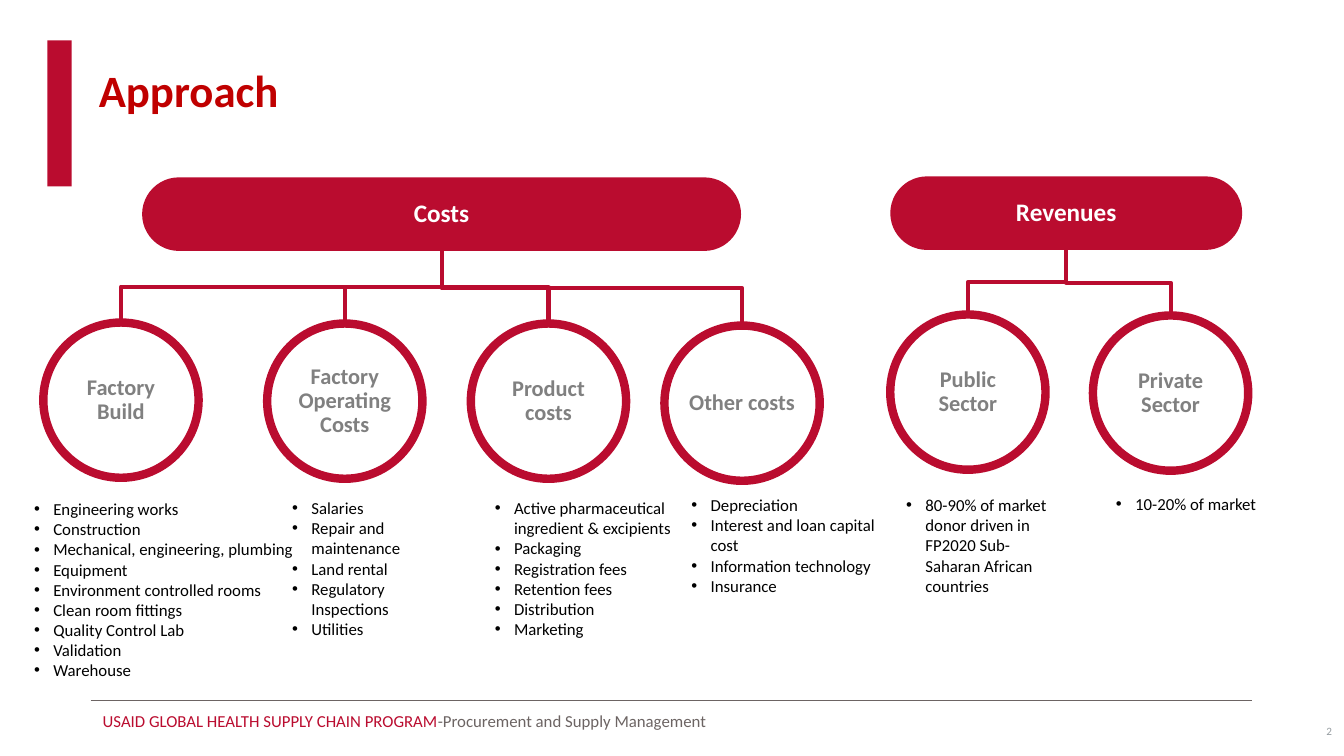
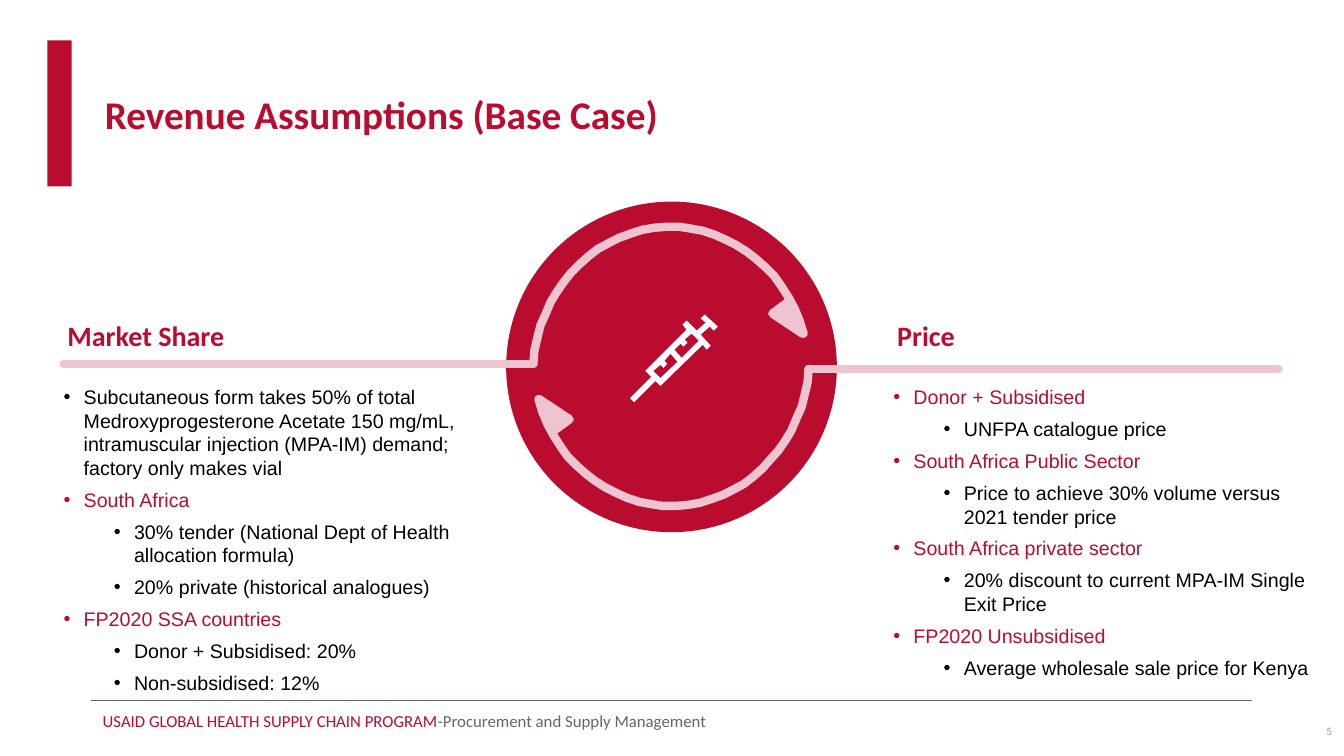
"""Build the approach and revenue assumption slides of a supply chain deck."""
from lxml.etree import SubElement
from pptx import Presentation
from pptx.dml.color import RGBColor
from pptx.enum.shapes import MSO_CONNECTOR, MSO_SHAPE
from pptx.enum.text import MSO_ANCHOR, MSO_AUTO_SIZE, PP_ALIGN
from pptx.oxml.ns import qn
from pptx.util import Emu, Pt

CRIMSON = RGBColor(0xBA, 0x0C, 0x2F)
RED = RGBColor(0xC0, 0x00, 0x00)
PINK = RGBColor(0xEE, 0xC4, 0xD0)
WHITE = RGBColor(0xFF, 0xFF, 0xFF)
BLACK = RGBColor(0x00, 0x00, 0x00)
GRAY = RGBColor(0x80, 0x80, 0x80)
FOOTER_GRAY = RGBColor(0x6C, 0x64, 0x63)
NUMBER_GRAY = RGBColor(0x95, 0x9C, 0xA0)
PX = 9144
CIRCLE = 154


def px(length):
    return Emu(round(length * PX))


def bezier(start, first, second, end, steps=16):
    return [
        tuple((1 - t) ** 3 * a + 3 * t * (1 - t) ** 2 * b + 3 * t * t * (1 - t) * c + t ** 3 * d
              for a, b, c, d in zip(start, first, second, end))
        for t in (step / steps for step in range(1, steps + 1))
    ]


class Deck:
    """House style and the slide being drawn."""

    def __init__(self):
        self.presentation = Presentation()
        self.presentation.slide_width = px(1333)
        self.presentation.slide_height = px(750)
        self.slide = None

    def start(self, title, left, top, size, color, number):
        self.slide = self.presentation.slides.add_slide(self.presentation.slide_layouts[5])
        heading = self.slide.shapes.title
        heading.left, heading.top, heading.width, heading.height = map(px, (left, top, 1240, 84))
        frame = heading.text_frame
        frame.text = title
        frame.auto_size = MSO_AUTO_SIZE.NONE
        frame.vertical_anchor = MSO_ANCHOR.BOTTOM
        frame.paragraphs[0].line_spacing = 0.9
        self.format(frame.paragraphs[0], size, color, True, PP_ALIGN.LEFT)

        self.shape(MSO_SHAPE.RECTANGLE, 47, 40, 24, 145)
        self.line(90, 695, 1242, 695, FOOTER_GRAY, 0.5)
        footer = self.text("USAID GLOBAL HEALTH SUPPLY CHAIN PROGRAM", 92, 700, 992, 30, 12, CRIMSON)
        division = footer.paragraphs[0].add_run()
        division.text = "-Procurement and Supply Management"
        self.style(division, 12, FOOTER_GRAY)
        self.text(number, 1282, 716, 39, 19, 8, NUMBER_GRAY, anchor=MSO_ANCHOR.MIDDLE,
                  align=PP_ALIGN.RIGHT, inset=False)

    def style(self, run, size, color, bold=False, font="Calibri"):
        run.font.name, run.font.size, run.font.bold = font, Pt(size), bold
        run.font.color.rgb = color

    def format(self, paragraph, size, color, bold=False, align=PP_ALIGN.LEFT, font="Calibri"):
        paragraph.alignment = align
        for run in paragraph.runs:
            self.style(run, size, color, bold, font)

    def clear_insets(self, frame):
        frame.margin_left = frame.margin_right = frame.margin_top = frame.margin_bottom = 0

    def frame(self, left, top, width, height, anchor=MSO_ANCHOR.TOP, inset=True):
        frame = self.slide.shapes.add_textbox(*map(px, (left, top, width, height))).text_frame
        frame.word_wrap = True
        frame.vertical_anchor = anchor
        if not inset:
            self.clear_insets(frame)
        return frame

    def text(self, words, left, top, width, height, size, color, bold=False,
             anchor=MSO_ANCHOR.TOP, align=PP_ALIGN.LEFT, inset=True):
        frame = self.frame(left, top, width, height, anchor, inset)
        frame.text = words
        self.format(frame.paragraphs[0], size, color, bold, align)
        return frame

    def bullet(self, paragraph, margin, hang):
        properties = paragraph._p.get_or_add_pPr()
        properties.set("marL", str(px(margin)))
        properties.set("indent", str(-px(hang)))
        SubElement(properties, qn("a:buFont")).set("typeface", "Arial")
        SubElement(properties, qn("a:buChar")).set("char", "•")

    def items(self, entries, left, top, width, height):
        frame = self.frame(left, top, width, height)
        frame.text = "\n".join(entries)
        for paragraph in frame.paragraphs:
            self.bullet(paragraph, 19, 19)
            self.format(paragraph, 12, BLACK)

    def outline(self, entries, left, top, width, height):
        frame = self.frame(left, top, width, height, inset=False)
        frame.text = "\n".join(words for words, _, _ in entries)
        for paragraph, (_, level, color) in zip(frame.paragraphs, entries):
            paragraph.level = level
            self.bullet(paragraph, 20 + 50 * level, 20)
            paragraph.space_after = Pt(6)
            self.format(paragraph, 14, color, font="Arial")

    def paint(self, shape, fill, line=None, weight=6):
        shape.shadow.inherit = False
        if fill is None:
            shape.fill.background()
        else:
            shape.fill.solid()
            shape.fill.fore_color.rgb = fill
        if line is None:
            shape.line.fill.background()
        else:
            self.stroke(shape, line, weight)

    def stroke(self, shape, color, weight, rounded=False):
        shape.line.color.rgb = color
        shape.line.width = Pt(weight)
        if rounded:
            outline = shape.line._get_or_add_ln()
            outline.set("cap", "rnd")
            SubElement(outline, qn("a:round"))

    def shape(self, kind, left, top, width, height, fill=CRIMSON, line=None):
        shape = self.slide.shapes.add_shape(kind, *map(px, (left, top, width, height)))
        self.paint(shape, fill, line)
        return shape

    def label(self, shape, words, size, color):
        frame = shape.text_frame
        frame.text = words
        frame.word_wrap = True
        frame.vertical_anchor = MSO_ANCHOR.MIDDLE
        self.clear_insets(frame)
        frame.paragraphs[0].line_spacing = 0.9
        self.format(frame.paragraphs[0], size, color, True, PP_ALIGN.CENTER)

    def pill(self, words, left, top, width, height):
        pill = self.shape(MSO_SHAPE.ROUNDED_RECTANGLE, left, top, width, height)
        pill.adjustments[0] = 0.5
        self.label(pill, words, 18, WHITE)

    def circle(self, words, left, top):
        circle = self.shape(MSO_SHAPE.FLOWCHART_CONNECTOR, left, top, CIRCLE, CIRCLE, WHITE, CRIMSON)
        self.label(circle, words, 16, GRAY)

    def connector(self, kind, points, color, weight, rounded=False):
        connector = self.slide.shapes.add_connector(kind, *map(px, points))
        self.stroke(connector, color, weight, rounded)
        SubElement(connector._element.spPr, qn("a:effectLst"))
        return connector

    def line(self, x1, y1, x2, y2, color, weight, rounded=False):
        self.connector(MSO_CONNECTOR.STRAIGHT, (x1, y1, x2, y2), color, weight, rounded)

    def branch(self, parent_x, parent_y, child_x, child_y):
        middle_x, middle_y = (parent_x + child_x) / 2, (parent_y + child_y) / 2
        half_drop, half_span = (child_y - parent_y) / 2, abs(child_x - parent_x) / 2
        side = 1 if child_x < parent_x else -1
        points = (middle_x - side * half_drop, middle_y - half_span,
                  middle_x + side * half_drop, middle_y + half_span)
        elbow = self.connector(MSO_CONNECTOR.ELBOW, points, CRIMSON, 3)
        turn = 90 if side == 1 else 270
        elbow._element.spPr.find(qn("a:xfrm")).set("rot", str(turn * 60000))

    def outlined(self, contours, fill=None, line=None, closed=True):
        builder = self.slide.shapes.build_freeform(*contours[0][0], scale=PX)
        for index, contour in enumerate(contours):
            if index:
                builder.move_to(*contour[0])
            builder.add_line_segments(contour[1:], close=closed)
        freeform = builder.convert_to_shape()
        self.paint(freeform, fill)
        if line is not None:
            self.stroke(freeform, line, 6, rounded=True)


BRANCHES = [
    ("Costs", (141, 176, 594, 73), [
        ("Factory Build", (43, 320), (24, 490, 341, 194),
         ["Engineering works", "Construction", "Mechanical, engineering, plumbing", "Equipment",
          "Environment controlled rooms", "Clean room fittings", "Quality Control Lab",
          "Validation", "Warehouse"]),
        ("Factory Operating Costs", (265, 321), (280, 489, 170, 182),
         ["Salaries", "Repair and maintenance", "Land rental", "Regulatory Inspections", "Utilities"]),
        ("Product costs", (467, 321), (481, 489, 267, 182),
         ["Active pharmaceutical\vingredient & excipients", "Packaging", "Registration fees",
          "Retention fees", "Distribution", "Marketing"]),
        ("Other costs", (659, 323), (676, 486, 207, 141),
         ["Depreciation", "Interest and loan capital cost", "Information technology", "Insurance"]),
    ]),
    ("Revenues", (883, 175, 349, 73), [
        ("Public Sector", (883, 312), (889, 486, 170, 141),
         ["80-90% of market donor driven in FP2020 Sub-Saharan African countries"]),
        ("Private Sector", (1084, 313), (1097, 485, 170, 61), ["10-20% of market"]),
    ]),
]

MARKET_SHARE = [
    ("Subcutaneous form takes 50% of total Medroxyprogesterone Acetate 150 mg/mL, "
     "intramuscular injection (MPA-IM) demand; factory only makes vial", 0, BLACK),
    ("South Africa", 0, CRIMSON),
    ("30% tender (National Dept of Health allocation formula)", 1, BLACK),
    ("20% private (historical analogues)", 1, BLACK),
    ("FP2020 SSA countries", 0, CRIMSON),
    ("Donor + Subsidised: 20%", 1, BLACK),
    ("Non-subsidised: 12%", 1, BLACK),
]

PRICE = [
    ("Donor + Subsidised", 0, CRIMSON),
    ("UNFPA catalogue price", 1, BLACK),
    ("South Africa Public Sector", 0, CRIMSON),
    ("Price to achieve 30% volume versus 2021 tender price", 1, BLACK),
    ("South Africa private sector", 0, CRIMSON),
    ("20% discount to current MPA-IM Single Exit Price", 1, BLACK),
    ("FP2020 Unsubsidised", 0, CRIMSON),
    ("Average wholesale sale price for Kenya", 1, BLACK),
]

SYRINGE = [
    [(699, 312), (695, 316), (700, 320), (691, 328), (681, 318), (677, 322), (681, 327),
     (640, 368), (646, 374), (625, 395), (629, 399), (650, 378), (655, 383), (697, 342),
     (701, 347), (705, 343), (695, 332), (704, 324), (708, 328), (712, 324)],
    [(648, 368), (655, 362), (658, 365), (662, 361), (659, 358), (665, 351), (672, 359), (655, 375)],
    [(676, 355), (669, 347), (675, 341), (678, 344), (682, 340), (679, 337), (686, 331), (693, 338)],
]

ARC = ([(802, 366)]
       + bezier((802, 366), (797, 436), (747, 492), (682, 501))
       + bezier((682, 501), (616, 509), (553, 465), (534, 396)))
ARROWHEAD = [(535, 396), (565, 416), (550, 427)]
UNDERLINE = [(1268, 366), (802, 366)]


def half_turn(points):
    return [(1331 - x, 727 - y) for x, y in points]


def draw_approach(deck):
    deck.start("Approach", 88, 37, 32, RED, "2")
    for heading, (left, top, width, height), parts in BRANCHES:
        for _, (part_left, part_top), _, _ in parts:
            deck.branch(left + width / 2, top + height, part_left + CIRCLE / 2, part_top)
        deck.pill(heading, left, top, width, height)
        for name, position, area, entries in parts:
            deck.circle(name, *position)
            deck.items(entries, *area)


def draw_revenue(deck):
    deck.start("Revenue Assumptions (Base Case)", 94, 58, 28, CRIMSON, "5")
    deck.shape(MSO_SHAPE.OVAL, 502, 200, 328, 328)
    for heading, left in (("Market Share", 57), ("Price", 880)):
        deck.text(heading, left, 283, 383, 71, 20, CRIMSON, True, MSO_ANCHOR.BOTTOM)
    deck.outline(MARKET_SHARE, 63, 382, 431, 253)
    deck.outline(PRICE, 886, 382, 415, 280)
    for turn in (list, half_turn):
        start, end = turn(UNDERLINE)
        deck.line(*start, *end, PINK, 6, rounded=True)
        deck.outlined([turn(ARC)], line=PINK, closed=False)
        deck.outlined([turn(ARROWHEAD)], PINK, PINK)
    deck.outlined(SYRINGE, WHITE)


def main():
    deck = Deck()
    draw_approach(deck)
    draw_revenue(deck)
    deck.presentation.save("out.pptx")


if __name__ == "__main__":
    main()
